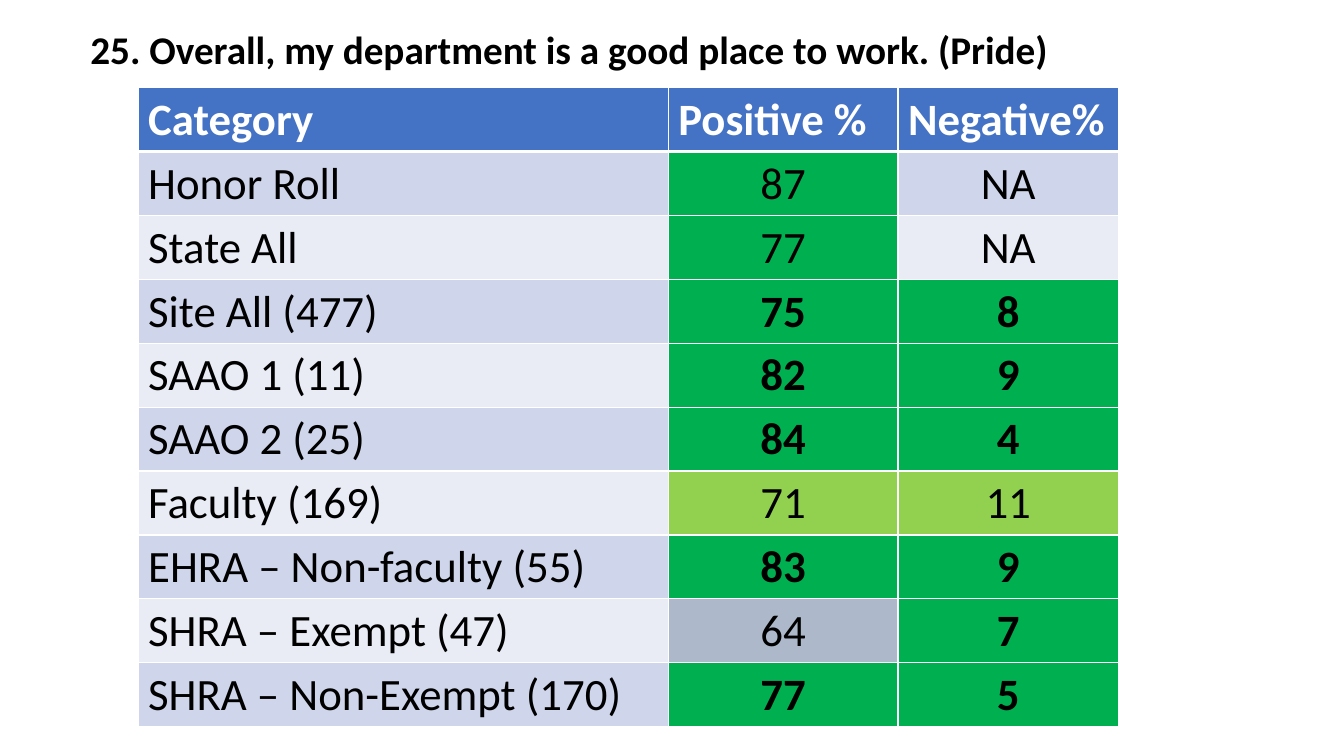
from lxml import etree
from pptx import Presentation
from pptx.dml.color import RGBColor
from pptx.enum.text import MSO_ANCHOR, PP_ALIGN
from pptx.oxml.ns import qn
from pptx.util import Cm, Pt

LEFT, CENTER = PP_ALIGN.LEFT, PP_ALIGN.CENTER
MIDDLE = MSO_ANCHOR.MIDDLE
BLACK, WHITE, HEADER_BLUE = "000000", "FFFFFF", "4472C4"
BANDS = ["CFD5EA", "E9EBF5"]
GREEN, LIGHT_GREEN, GREY = "00B050", "92D050", "ADB9CA"


def color(value):
    return RGBColor.from_string(value)


def write(frame, text, size=32, bold=False, ink=BLACK, align=LEFT, spacing=1.0):
    para = frame.paragraphs[0]
    para.alignment = align
    para.line_spacing = spacing
    span = para.add_run()
    span.text = text
    span.font.name = "Calibri"
    span.font.size = Pt(size)
    span.font.bold = bold
    span.font.color.rgb = color(ink)


deck = Presentation()
deck.slide_width, deck.slide_height = Cm(33.87), Cm(19.05)
page = deck.slides.add_slide(deck.slide_layouts[6])

# Question
box = page.shapes.add_textbox(Cm(2.03), Cm(0.41), Cm(28.35), Cm(1.8))
box.text_frame.word_wrap = True
box.text_frame.vertical_anchor = MIDDLE
write(box.text_frame, "25. Overall, my department is a good place to work. (Pride)",
      size=28, bold=True, spacing=0.9)

# Results: category, positive share, negative share
headings = ["Category", "Positive %", "Negative%"]
results = [
    ("Honor Roll", 87, "NA"),
    ("State All", 77, "NA"),
    ("Site All (477)", 75, 8),
    ("SAAO 1 (11)", 82, 9),
    ("SAAO 2 (25)", 84, 4),
    ("Faculty (169)", 71, 11),
    ("EHRA – Non-faculty (55)", 83, 9),
    ("SHRA – Exempt (47)", 64, 7),
    ("SHRA – Non-Exempt (170)", 77, 5),
]
widths = [13.36, 5.79, 5.56]
row_height = 1.61
row_count = len(results) + 1
table = page.shapes.add_table(row_count, len(widths), Cm(3.48), Cm(2.21),
                              Cm(sum(widths)), Cm(row_height * row_count)).table
for column, width in zip(table.columns, widths):
    column.width = Cm(width)
for row in table.rows:
    row.height = Cm(row_height)

# White cell borders, thicker under the header
for row_index, row in enumerate(table.rows):
    for cell in row.cells:
        properties = cell._tc.get_or_add_tcPr()
        for side in ("lnL", "lnR", "lnT", "lnB"):
            under_header = (row_index, side) in [(0, "lnB"), (1, "lnT")]
            line = etree.SubElement(properties, qn(f"a:{side}"),
                                    w=str(Pt(3 if under_header else 1)))
            paint = etree.SubElement(line, qn("a:solidFill"))
            etree.SubElement(paint, qn("a:srgbClr"), val=WHITE)

# Header row
for cell, heading in zip(table.rows[0].cells, headings):
    cell.fill.solid()
    cell.fill.fore_color.rgb = color(HEADER_BLUE)
    write(cell.text_frame, heading, bold=True, ink=WHITE)

# Body rows: shares are coloured by score, and green ones are bold
# where both shares were measured
for row_index, (category, positive, negative) in enumerate(results):
    band = BANDS[row_index % 2]
    measured = negative != "NA"
    positive_fill = GREEN if positive >= 75 else LIGHT_GREEN if positive >= 65 else GREY
    negative_fill = band
    if measured:
        negative_fill = GREEN if negative < 10 else LIGHT_GREEN
    entries = [(category, band, LEFT), (positive, positive_fill, CENTER),
               (negative, negative_fill, CENTER)]
    for cell, (value, fill, align) in zip(table.rows[row_index + 1].cells, entries):
        cell.fill.solid()
        cell.fill.fore_color.rgb = color(fill)
        write(cell.text_frame, str(value), bold=measured and fill == GREEN, align=align)

deck.save("out.pptx")
